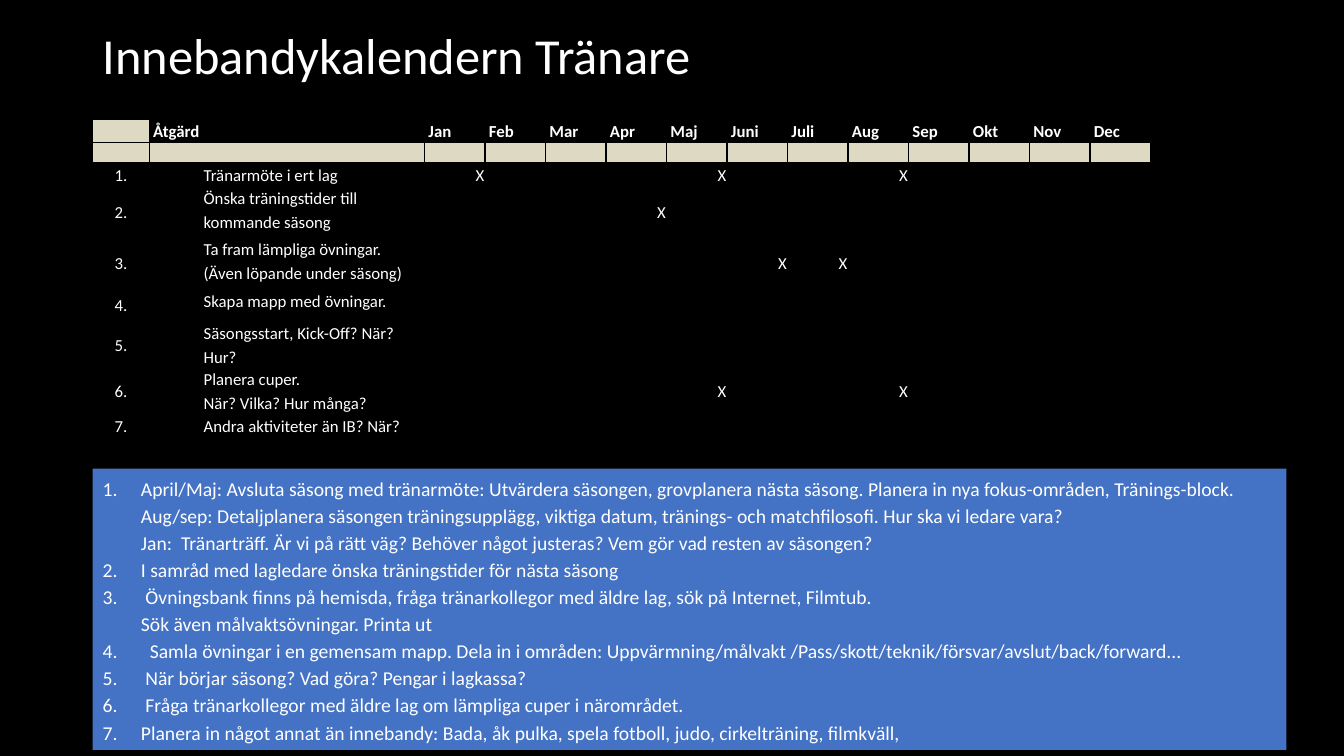
from copy import deepcopy

from lxml import etree
from pptx import Presentation
from pptx.dml.color import RGBColor
from pptx.enum.shapes import MSO_SHAPE
from pptx.enum.text import MSO_ANCHOR, MSO_AUTO_SIZE, PP_ALIGN
from pptx.oxml.ns import qn
from pptx.util import Inches, Pt

LEFT, CENTER = PP_ALIGN.LEFT, PP_ALIGN.CENTER
TOP, MIDDLE = MSO_ANCHOR.TOP, MSO_ANCHOR.MIDDLE
GROW = MSO_AUTO_SIZE.SHAPE_TO_FIT_TEXT
RECTANGLE = MSO_SHAPE.RECTANGLE

FONT = "Calibri"
BLACK, WHITE, SAND, BLUE = "000000", "FFFFFF", "DDD9C3", "4472C4"

MONTHS = ["Jan", "Feb", "Mar", "Apr", "Maj", "Juni",
          "Juli", "Aug", "Sep", "Okt", "Nov", "Dec"]
COLUMN_WIDTHS = [0.56, 2.73] + [0.6] * len(MONTHS)
ROW_HEIGHTS = [0.17, 0.16, 0.16, 0.51, 0.51, 0.32, 0.31, 0.24, 0.24]

# In all texts, \n starts a paragraph and \v breaks a line within one
ACTIVITIES = [
    ("Tränarmöte i ert lag", ["Jan", "Maj", "Aug"]),
    ("Önska träningstider till kommande säsong", ["Apr"]),
    ("Ta fram lämpliga övningar. \v(Även löpande under säsong)", ["Juni", "Juli"]),
    ("Skapa mapp med övningar.", []),
    ("Säsongsstart, Kick-Off? När? Hur?", []),
    ("Planera cuper.\nNär? Vilka? Hur många?", ["Maj", "Aug"]),
    ("Andra aktiviteter än IB? När?", []),
]

DETAILS = [
    "April/Maj: Avsluta säsong med tränarmöte: Utvärdera säsongen, grovplanera "
    "nästa säsong. Planera in nya fokus-områden, Tränings-block. \v"
    "Aug/sep: Detaljplanera säsongen träningsupplägg, viktiga datum, tränings- "
    "och matchfilosofi. Hur ska vi ledare vara?\v"
    "Jan:  Tränarträff. Är vi på rätt väg? Behöver något justeras? "
    "Vem gör vad resten av säsongen?",
    "I samråd med lagledare önska träningstider för nästa säsong",
    " Övningsbank finns på hemisda, fråga tränarkollegor med äldre lag, "
    "sök på Internet, Filmtub.\vSök även målvaktsövningar. Printa ut",
    "  Samla övningar i en gemensam mapp. Dela in i områden: "
    "Uppvärmning/målvakt /Pass/skott/teknik/försvar/avslut/back/forward...",
    " När börjar säsong? Vad göra? Pengar i lagkassa?",
    " Fråga tränarkollegor med äldre lag om lämpliga cuper i närområdet.",
    "Planera in något annat än innebandy: Bada, åk pulka, spela fotboll, judo, "
    "cirkelträning, filmkväll,",
]


def rgb(color):
    return RGBColor.from_string(color)


def write(frame, text, size=12, bold=False, align=LEFT, spacing=1.15,
          after=0, left=0, hanging=0, numbered=False):
    for index, line in enumerate(text.split("\n")):
        paragraph = frame.add_paragraph() if index else frame.paragraphs[0]
        paragraph.text = line
        paragraph.alignment = align
        paragraph.line_spacing = spacing
        paragraph.space_before = Pt(0)
        paragraph.space_after = Pt(after)
        properties = paragraph._p.get_or_add_pPr()
        properties.set("marL", str(Inches(left)))
        properties.set("indent", str(-Inches(hanging)))
        if numbered:
            etree.SubElement(properties, qn("a:buAutoNum"), type="arabicPeriod")
        for run in paragraph.runs:
            run.font.name = FONT
            run.font.size = Pt(size)
            run.font.bold = bold
            run.font.color.rgb = rgb(WHITE)
        # Line breaks and empty paragraphs need the text size too
        for line_break in paragraph._p.findall(qn("a:br")):
            line_break.append(deepcopy(paragraph.runs[0]._r.rPr))
        if not line:
            etree.SubElement(paragraph._p, qn("a:endParaRPr"), sz=str(size * 100))


def add_title(slide, text):
    box = slide.shapes.add_textbox(Inches(0.92), Inches(0.26), Inches(11.5), Inches(1.45))
    box.text_frame.word_wrap = True
    write(box.text_frame, text, size=36, spacing=0.9)


def style_cell(cell, color=None):
    cell.margin_left = cell.margin_right = Inches(0.04)
    cell.margin_top = cell.margin_bottom = 0
    properties = cell._tc.get_or_add_tcPr()
    for side in ("lnL", "lnR", "lnT", "lnB"):
        border = etree.SubElement(properties, qn(f"a:{side}"), w=str(Pt(1)))
        solid = etree.SubElement(border, qn("a:solidFill"))
        etree.SubElement(solid, qn("a:srgbClr"), val=BLACK)
    if color:
        cell.fill.solid()
        cell.fill.fore_color.rgb = rgb(color)
    else:
        cell.fill.background()


def fill_cell(cell, text, anchor=MIDDLE, **text_format):
    cell.vertical_anchor = anchor
    write(cell.text_frame, text, **text_format)


def add_calendar(slide):
    calendar = slide.shapes.add_table(
        len(ROW_HEIGHTS), len(COLUMN_WIDTHS),
        Inches(0.92), Inches(1.18), Inches(10.44), Inches(3.11)).table
    calendar.first_row = calendar.horz_banding = False
    for column, width in zip(calendar.columns, COLUMN_WIDTHS):
        column.width = Inches(width)
    for row, height in zip(calendar.rows, ROW_HEIGHTS):
        row.height = Inches(height)

    # Contents by (row, column): header, then one row per activity
    contents = {(0, column): (heading, dict(bold=True, after=10))
                for column, heading in enumerate(["Åtgärd"] + MONTHS, 1)}
    for number, (activity, months) in enumerate(ACTIVITIES, 1):
        row = number + 1
        contents[row, 0] = (f"{number}.", dict(align=CENTER, after=10))
        contents[row, 1] = (activity, dict(anchor=TOP, left=0.5))
        for month in months:
            contents[row, MONTHS.index(month) + 2] = ("X", dict(align=CENTER, left=0.5))

    for row in range(len(ROW_HEIGHTS)):
        for column in range(len(COLUMN_WIDTHS)):
            cell = calendar.cell(row, column)
            is_sand = row == 1 or (row, column) == (0, 0)
            style_cell(cell, SAND if is_sand else None)
            text, text_format = contents.get((row, column), ("", {}))
            fill_cell(cell, text, **text_format)


def add_details(slide):
    panel = slide.shapes.add_shape(
        RECTANGLE, Inches(0.92), Inches(4.65), Inches(11.84), Inches(2.79))
    panel.shadow.inherit = False
    panel.fill.solid()
    panel.fill.fore_color.rgb = rgb(BLUE)
    panel.line.fill.background()
    frame = panel.text_frame
    frame.word_wrap = True
    frame.auto_size = GROW
    frame.vertical_anchor = TOP
    write(frame, "\n".join(DETAILS), size=14, left=0.38, hanging=0.38, numbered=True)
    frame.paragraphs[-1].space_after = Pt(10)


def main():
    presentation = Presentation()
    presentation.slide_width = Inches(13.33)
    presentation.slide_height = Inches(7.5)
    slide = presentation.slides.add_slide(presentation.slide_layouts[6])
    slide.background.fill.solid()
    slide.background.fill.fore_color.rgb = rgb(BLACK)

    add_title(slide, "Innebandykalendern Tränare")
    add_calendar(slide)
    add_details(slide)
    presentation.save("out.pptx")


if __name__ == "__main__":
    main()
